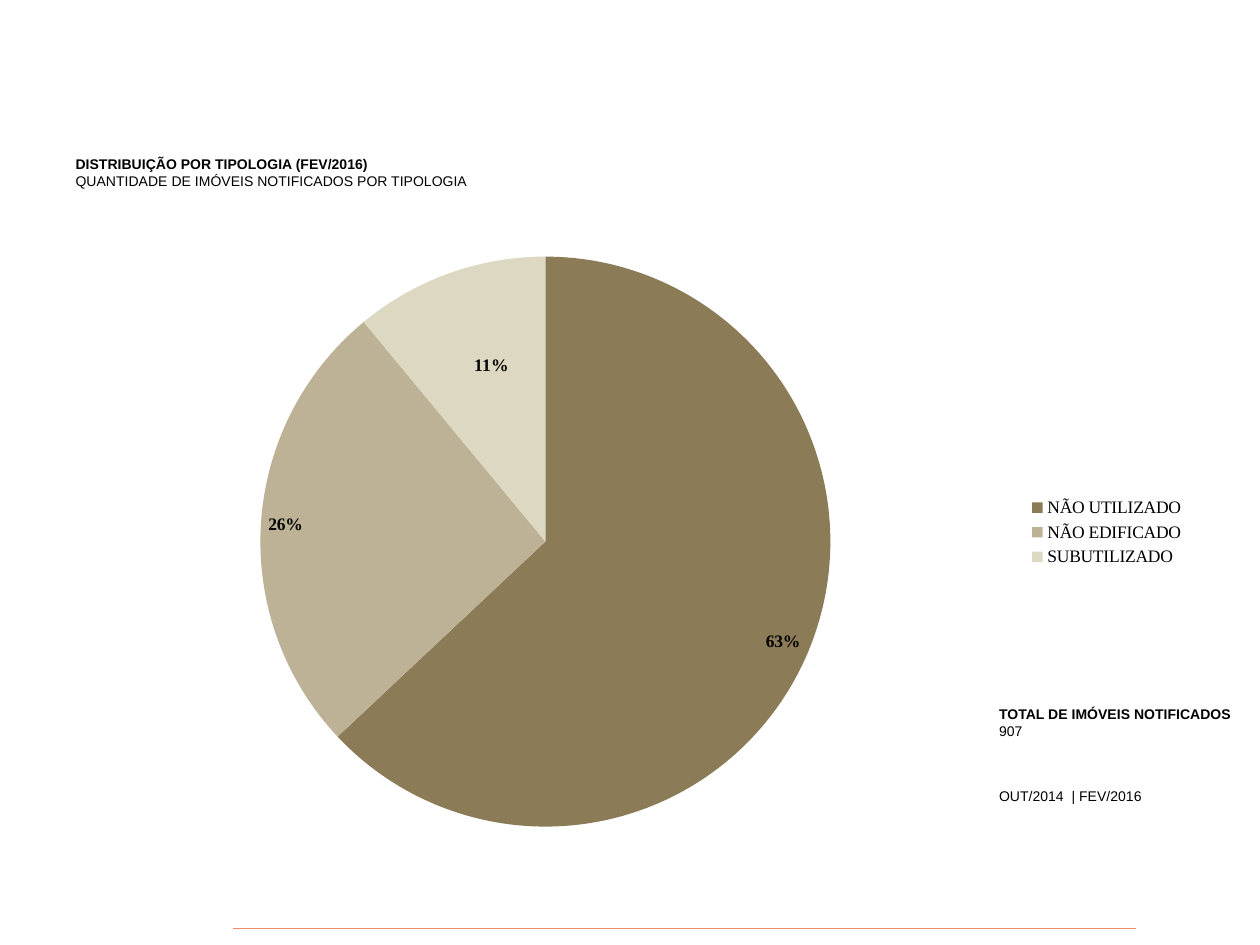
from copy import deepcopy

from lxml.etree import SubElement
from pptx import Presentation
from pptx.chart.data import CategoryChartData
from pptx.dml.color import RGBColor
from pptx.enum.chart import XL_CHART_TYPE, XL_LABEL_POSITION as LabelPos, XL_LEGEND_POSITION as LegendPos
from pptx.enum.shapes import MSO_CONNECTOR
from pptx.enum.text import MSO_ANCHOR, MSO_AUTO_SIZE, PP_ALIGN
from pptx.oxml import parse_xml
from pptx.oxml.ns import nsdecls, qn
from pptx.util import Pt


def rgb(hex_color):
    return RGBColor.from_string(hex_color)


def manual_layout(**parts):
    """Return a c:layout element; parts come in schema order."""
    inner = "".join(f'<c:{name} val="{value}"/>' for name, value in parts.items())
    return parse_xml(f'<c:layout {nsdecls("c")}><c:manualLayout>{inner}</c:manualLayout></c:layout>')


class TypologySlide:
    text_font, chart_font = "Arial", "Times New Roman"
    text_size, chart_size = 8, 10
    ink, rule = "000000", "EF8C6A"

    def __init__(self, slide):
        self.slide = slide

    def style(self, font, name, size, bold=False):
        font.name, font.size, font.bold = name, Pt(size), bold
        font.color.rgb = rgb(self.ink)

    def line(self, x1, y1, x2, y2):
        rule = self.slide.shapes.add_connector(
            MSO_CONNECTOR.STRAIGHT, Pt(x1), Pt(y1), Pt(x2), Pt(y2))
        rule.line.color.rgb = rgb(self.rule)
        rule.line.width = Pt(0.5)
        SubElement(rule._element.spPr, qn("a:effectLst"))

    def title(self, heading, subheading, left, top, width, height):
        title = self.slide.shapes.title
        title.left, title.top, title.width, title.height = map(Pt, (left, top, width, height))
        frame = title.text_frame
        frame.text = f"{heading}\v{subheading}"
        frame.vertical_anchor = MSO_ANCHOR.BOTTOM
        frame.auto_size = MSO_AUTO_SIZE.NONE
        paragraph = frame.paragraphs[0]
        paragraph.alignment = PP_ALIGN.LEFT
        self.style(paragraph.font, self.text_font, self.text_size)
        for run, bold in zip(paragraph.runs, (True, False)):
            self.style(run.font, self.text_font, self.text_size, bold)

    def total(self, label, count, period, left, top, width, height):
        box = self.slide.shapes.add_textbox(*map(Pt, (left, top, width, height)))
        frame = box.text_frame
        frame.word_wrap = False
        frame.text = "\n".join((label, count, period))
        for paragraph in frame.paragraphs:
            self.style(paragraph.font, self.text_font, self.text_size)
        frame.paragraphs[0].font.bold = True
        frame.paragraphs[-1].space_before = Pt(28)

    def pie(self, shares, colors, left, top, width, height):
        data = CategoryChartData()
        data.categories = list(shares)
        data.add_series("Series 1", list(shares.values()))
        chart = self.slide.shapes.add_chart(
            XL_CHART_TYPE.PIE, *map(Pt, (left, top, width, height)), data).chart
        chart.has_title = False
        self.style(chart.font, self.chart_font, self.chart_size)
        chart.has_legend = True
        chart.legend.position = LegendPos.RIGHT
        chart.legend.include_in_layout = False
        plot = chart.plots[0]
        plot.vary_by_categories = True
        series = plot.series[0]
        for index, color in enumerate(colors):
            fill = series.points[index].format.fill
            fill.solid()
            fill.fore_color.rgb = rgb(color)

        labels = series.data_labels
        labels.show_value, labels.show_percentage = False, True
        labels.number_format, labels.number_format_is_linked = "0%", False
        labels.position = LabelPos.INSIDE_END
        self.style(labels.font, self.chart_font, self.chart_size, True)
        self.move_label(series, len(shares) - 1, 0.02, 0.12)

        plot_area = chart._chartSpace.chart.plotArea
        for old in plot_area.findall(qn("c:layout")):
            plot_area.remove(old)
        plot_area.insert(0, manual_layout(
            layoutTarget="inner", xMode="edge", yMode="edge", x=0.174, y=0.058, w=0.503, h=0.914))

    def move_label(self, series, index, dx, dy):
        """Shift one label from its default place, by fractions of the chart."""
        group = series._element.find(qn("c:dLbls"))
        label = parse_xml(f'<c:dLbl {nsdecls("c")}><c:idx val="{index}"/></c:dLbl>')
        label.append(manual_layout(x=dx, y=dy))
        for part in group:
            if part.tag != qn("c:showLeaderLines"):
                label.append(deepcopy(part))
        group.insert(0, label)


def main():
    deck = Presentation()
    deck.slide_width, deck.slide_height = Pt(720), Pt(540)
    page = TypologySlide(deck.slides.add_slide(deck.slide_layouts[5]))
    page.line(133.2, 530.6, 649.4, 530.6)
    page.title("DISTRIBUIÇÃO POR TIPOLOGIA (FEV/2016)",
               "QUANTIDADE DE IMÓVEIS NOTIFICADOS POR TIPOLOGIA", 36, 21.6, 648, 90)
    page.total("TOTAL DE IMÓVEIS NOTIFICADOS", "907", "OUT/2014  | FEV/2016",
               563.8, 399.6, 147.6, 81.4)
    page.pie({"NÃO UTILIZADO": 63, "NÃO EDIFICADO": 26, "SUBUTILIZADO": 11},
             ("8B7B57", "BDB196", "DCD8C2"), 36, 126, 648, 356.4)
    deck.save("out.pptx")


if __name__ == "__main__":
    main()
